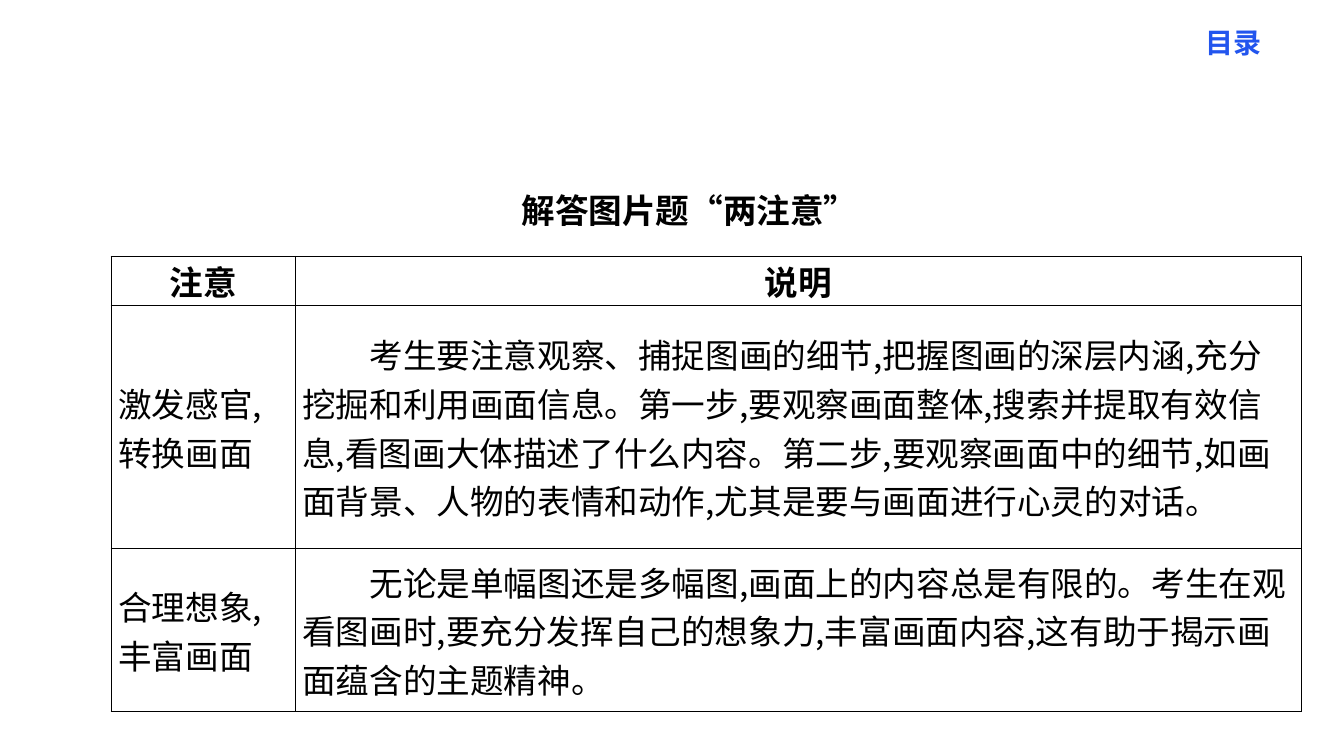
from lxml.etree import SubElement
from pptx import Presentation
from pptx.dml.color import RGBColor
from pptx.enum.text import MSO_ANCHOR, PP_ALIGN
from pptx.oxml.ns import qn
from pptx.util import Cm, Pt

# Content
CONTENTS_LABEL = "目录"
TITLE = "解答图片题“两注意”"
HEADINGS = ("注意", "说明")
ADVICE = [
    ("激发感官,转换画面",
     "考生要注意观察、捕捉图画的细节,把握图画的深层内涵,充分挖掘和利用画面信息。"
     "第一步,要观察画面整体,搜索并提取有效信息,看图画大体描述了什么内容。"
     "第二步,要观察画面中的细节,如画面背景、人物的表情和动作,尤其是要与画面进行心灵的对话。"),
    ("合理想象,丰富画面",
     "无论是单幅图还是多幅图,画面上的内容总是有限的。"
     "考生在观看图画时,要充分发挥自己的想象力,丰富画面内容,这有助于揭示画面蕴含的主题精神。"),
]

# Style and layout
FONT = "Noto Sans CJK SC"
BLACK = RGBColor(0x00, 0x00, 0x00)
BLUE = RGBColor(0x22, 0x55, 0xEE)
BODY_SIZE = 24
COLUMN_WIDTHS = (Cm(4.64), Cm(25.36))
ROW_HEIGHTS = (Cm(1.24), Cm(6.13), Cm(4.1))
CELL_MARGIN = Cm(0.18)


def write(frame, text, size=BODY_SIZE, color=BLACK, bold=False, align=PP_ALIGN.CENTER):
    frame.text = text
    paragraph = frame.paragraphs[0]
    paragraph.alignment = align
    for run in paragraph.runs:
        run.font.size = Pt(size)
        run.font.bold = bold
        run.font.color.rgb = color
        run.font.name = FONT
        SubElement(run.font._element, qn("a:ea"), typeface=FONT)
    return paragraph


def add_label(slide, text, left, top, width, height, **style):
    frame = slide.shapes.add_textbox(left, top, width, height).text_frame
    frame.margin_left = frame.margin_right = frame.margin_top = frame.margin_bottom = 0
    frame.word_wrap = True
    frame.vertical_anchor = MSO_ANCHOR.MIDDLE
    write(frame, text, bold=True, **style)


def add_borders(cell):
    properties = cell._tc.get_or_add_tcPr()
    for position, side in enumerate(("a:lnL", "a:lnR", "a:lnT", "a:lnB")):
        line = properties.makeelement(qn(side), {"w": str(Pt(1))})
        fill = SubElement(line, qn("a:solidFill"))
        SubElement(fill, qn("a:srgbClr"), val=str(BLACK))
        properties.insert(position, line)


def add_advice_table(slide):
    rows = [HEADINGS, *ADVICE]
    table = slide.shapes.add_table(
        len(rows), len(HEADINGS), Cm(2.8), Cm(6.46),
        sum(COLUMN_WIDTHS), sum(ROW_HEIGHTS)).table
    table.first_row = table.horz_banding = False
    for column, width in zip(table.columns, COLUMN_WIDTHS):
        column.width = width
    for r, (row, height) in enumerate(zip(rows, ROW_HEIGHTS)):
        table.rows[r].height = height
        for c, text in enumerate(row):
            cell = table.cell(r, c)
            cell.fill.background()
            cell.margin_left = cell.margin_right = CELL_MARGIN
            cell.margin_top = cell.margin_bottom = 0
            cell.vertical_anchor = MSO_ANCHOR.MIDDLE
            is_heading = r == 0
            paragraph = write(cell.text_frame, text, bold=is_heading,
                              align=PP_ALIGN.CENTER if is_heading else PP_ALIGN.LEFT)
            # Explanations start with a two-character indent
            if c == 1 and not is_heading:
                paragraph._p.get_or_add_pPr().set("indent", str(Pt(2 * BODY_SIZE)))
            add_borders(cell)


def main():
    presentation = Presentation()
    presentation.slide_width = Cm(33.87)
    presentation.slide_height = Cm(19.05)
    slide = presentation.slides.add_slide(presentation.slide_layouts[6])

    add_label(slide, CONTENTS_LABEL, Cm(30.1), Cm(0.5), Cm(1.98), Cm(1.12),
              size=20, color=BLUE)
    add_label(slide, TITLE, Cm(1.96), Cm(4.68), Cm(30.83), Cm(1.24))
    add_advice_table(slide)

    presentation.save("out.pptx")


if __name__ == "__main__":
    main()
